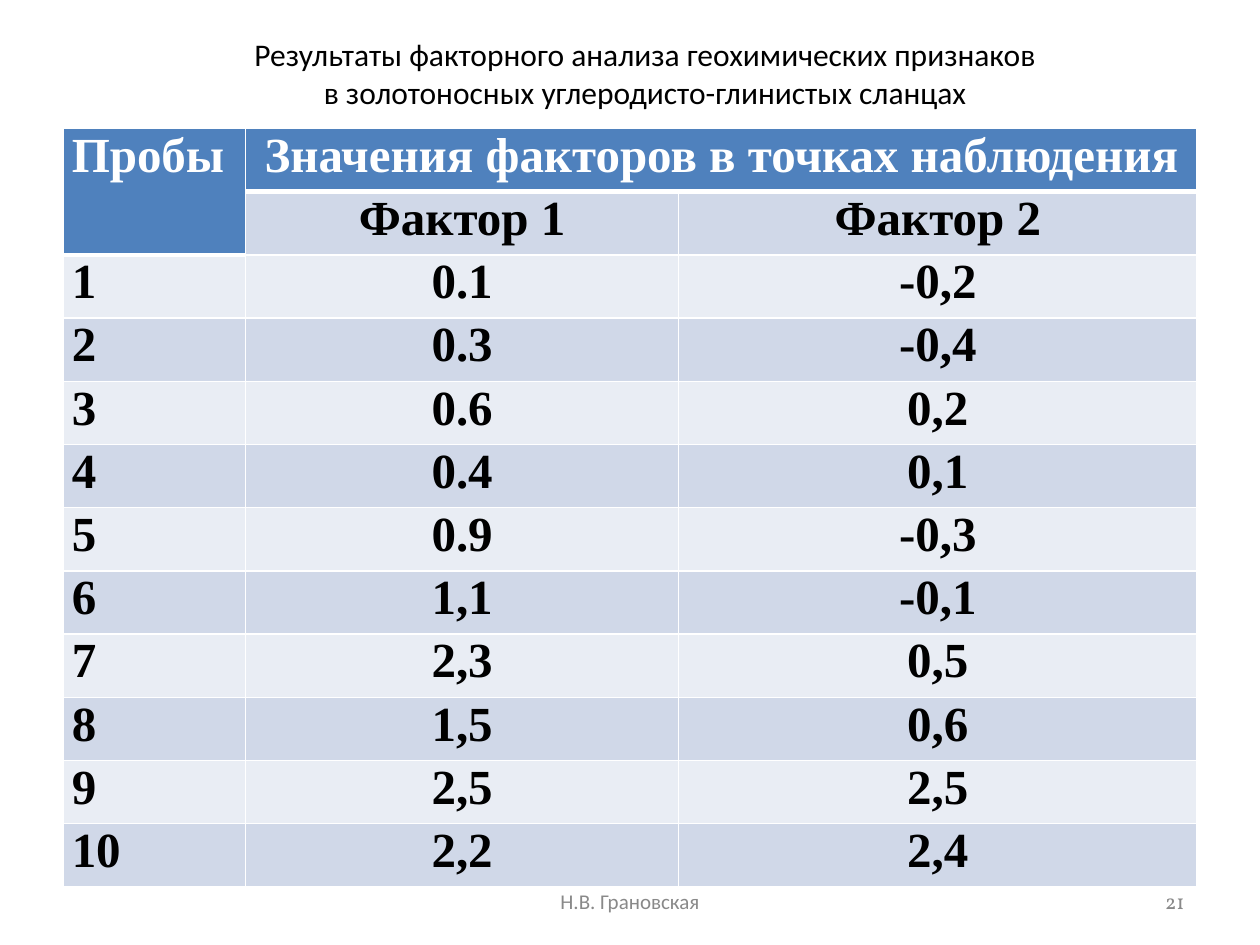
import pptx
import pptx.dml.color
import pptx.enum.text
import pptx.oxml
import pptx.oxml.ns
import pptx.util

RGBColor = pptx.dml.color.RGBColor
Align = pptx.enum.text.PP_ALIGN
Anchor = pptx.enum.text.MSO_ANCHOR
Inches = pptx.util.Inches

BLACK = RGBColor(0x00, 0x00, 0x00)
WHITE = RGBColor(0xFF, 0xFF, 0xFF)
BLUE = RGBColor(0x4F, 0x81, 0xBD)
BAND_DARK = RGBColor(0xD0, 0xD8, 0xE8)
BAND_LIGHT = RGBColor(0xE9, 0xED, 0xF4)
GREY = RGBColor(0x89, 0x89, 0x89)

WIDTH, HEIGHT = 10, 7.5
TITLE_BOX = (0.62, 0.23, 9, 0.7)
TABLE_BOX = (0.5, 1.02, 9, 6.02)
FOOTER_BOX = (0.5, 6.95, 9, 0.4)
COLUMN_SHARES = (0.161, 0.382, 0.457)

TITLE = ("Результаты факторного анализа геохимических признаков\v"
         "в золотоносных углеродисто-глинистых сланцах")
HEADERS = [("Пробы", "Значения факторов в точках наблюдения", ""),
           ("", "Фактор 1", "Фактор 2")]
FACTOR_1 = ("0.1", "0.3", "0.6", "0.4", "0.9", "1,1", "2,3", "1,5", "2,5", "2,2")
FACTOR_2 = ("-0,2", "-0,4", "0,2", "0,1", "-0,3", "-0,1", "0,5", "0,6", "2,5", "2,4")

TITLE_FONT = {"size": pptx.util.Pt(18), "name": "Calibri"}
TABLE_FONT = {"size": pptx.util.Pt(28), "name": "Times New Roman", "bold": True}
AUTHOR_FONT = {"size": pptx.util.Pt(12), "name": "Calibri"}
NUMBER_FONT = {"size": pptx.util.Pt(12), "name": "Vollkorn"}


def set_attributes(target, values):
    for name, value in values.items():
        setattr(target, name, value)


def write_text(frame, text, font, color, align):
    frame.text = text
    para = frame.paragraphs[0]
    para.alignment = align
    for span in para.runs:
        set_attributes(span.font, font)
        span.font.color.rgb = color


def add_title(page, box):
    title = page.shapes.title
    places = map(Inches, box)
    set_attributes(title, dict(zip(("left", "top", "width", "height"), places)))
    title.text_frame.vertical_anchor = Anchor.MIDDLE
    write_text(title.text_frame, TITLE, TITLE_FONT, BLACK, Align.CENTER)


def set_borders(cell, bottom_points):
    """Draw white cell borders, 1 pt wide except at the bottom."""
    widths = {"lnL": 1, "lnR": 1, "lnT": 1, "lnB": bottom_points}
    properties = cell._tc.get_or_add_tcPr()
    for position, (tag, points) in enumerate(widths.items()):
        line = pptx.oxml.parse_xml(
            f'<a:{tag} {pptx.oxml.ns.nsdecls("a")} w="{pptx.util.Pt(points)}">'
            f'<a:solidFill><a:srgbClr val="{WHITE}"/></a:solidFill></a:{tag}>')
        properties.insert(position, line)


def add_factor_table(page, box):
    samples = [(str(number), *values)
               for number, values in enumerate(zip(FACTOR_1, FACTOR_2), 1)]
    rows = HEADERS + samples
    table = page.shapes.add_table(len(rows), len(COLUMN_SHARES),
                                  *map(Inches, box)).table
    for column, share in zip(table.columns, COLUMN_SHARES):
        column.width = Inches(box[2] * share)
    for row in table.rows:
        row.height = Inches(box[3] / len(rows))
    table.cell(0, 0).merge(table.cell(1, 0))
    table.cell(0, 1).merge(table.cell(0, 2))

    margins = {"margin_left": Inches(0.07), "margin_right": Inches(0.07),
               "margin_top": 0, "margin_bottom": 0}
    for r, texts in enumerate(rows):
        for c, text in enumerate(texts):
            cell = table.cell(r, c)
            is_header = r == 0 or (r, c) == (1, 0)
            set_attributes(cell, margins)
            cell.fill.solid()
            band = BAND_DARK if r % 2 else BAND_LIGHT
            cell.fill.fore_color.rgb = BLUE if is_header else band
            set_borders(cell, 3 if is_header else 1)
            if not cell.is_spanned:
                write_text(cell.text_frame, text, TABLE_FONT,
                           WHITE if is_header else BLACK,
                           Align.CENTER if c else Align.LEFT)


def add_footer(page, box):
    left, top, width, height = box
    parts = [("Н.В. Грановская", AUTHOR_FONT, Align.CENTER, 0.325, 0.35),
             ("21", NUMBER_FONT, Align.RIGHT, 0.74, 0.26)]
    for text, font, align, start, share in parts:
        label = page.shapes.add_textbox(
            Inches(left + width * start), Inches(top),
            Inches(width * share), Inches(height))
        set_attributes(label.text_frame, {"word_wrap": True,
                                          "vertical_anchor": Anchor.MIDDLE})
        write_text(label.text_frame, text, font, GREY, align)


def main():
    deck = pptx.Presentation()
    set_attributes(deck, {"slide_width": Inches(WIDTH),
                          "slide_height": Inches(HEIGHT)})
    page = deck.slides.add_slide(deck.slide_layouts.get_by_name("Title Only"))
    add_title(page, TITLE_BOX)
    add_factor_table(page, TABLE_BOX)
    add_footer(page, FOOTER_BOX)
    deck.save("out.pptx")


if __name__ == "__main__":
    main()
